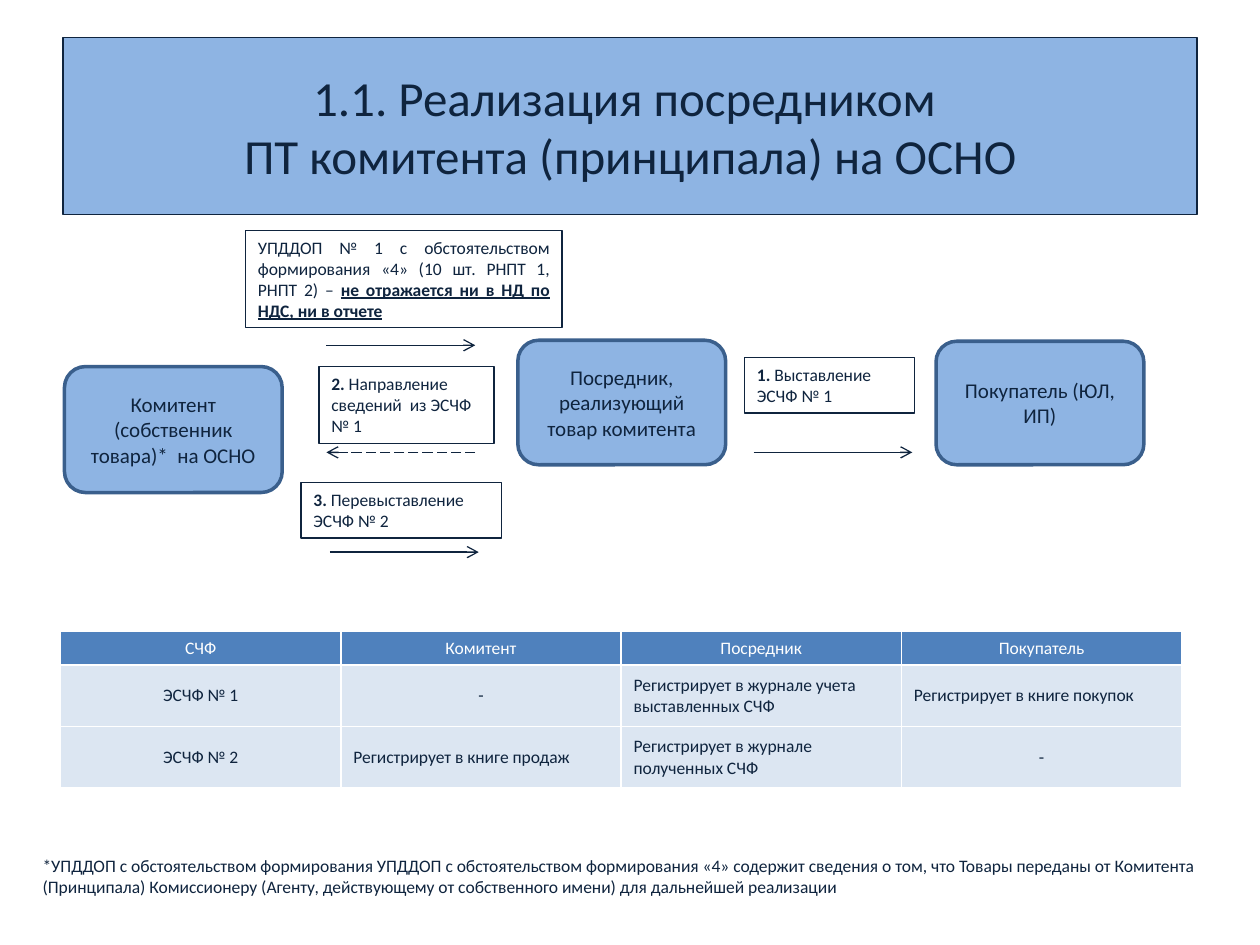
from lxml import etree
from pptx import Presentation
from pptx.dml.color import RGBColor
from pptx.enum.dml import MSO_LINE
from pptx.enum.shapes import MSO_CONNECTOR, MSO_SHAPE
from pptx.enum.text import MSO_ANCHOR, MSO_AUTO_SIZE, PP_ALIGN
from pptx.oxml.ns import qn
from pptx.util import Cm, Pt

RECT, ROUND = MSO_SHAPE.RECTANGLE, MSO_SHAPE.ROUNDED_RECTANGLE
LEFT, CENTER, JUSTIFY = PP_ALIGN.LEFT, PP_ALIGN.CENTER, PP_ALIGN.JUSTIFY
TOP, MIDDLE = MSO_ANCHOR.TOP, MSO_ANCHOR.MIDDLE
GROW = MSO_AUTO_SIZE.SHAPE_TO_FIT_TEXT
LONG_DASH = MSO_LINE.LONG_DASH


def rgb(value):
    return RGBColor.from_string(value)


class Board:
    font = "Calibri"
    ink, white = "0F243E", "FFFFFF"
    blue, outline = "8EB4E3", "3A5F8C"
    header, body = "4F81BD", "DCE6F2"

    def __init__(self, slide):
        self.s = slide

    def style(self, p, size, align=LEFT, color=ink):
        p.alignment = align
        p.font.name = self.font
        p.font.size = Pt(size)
        p.font.color.rgb = rgb(color)

    def block(self, kind, box, text, size=12, line=outline, width=2):
        """Add a filled shape with centred text."""
        sp = self.s.shapes.add_shape(kind, *map(Cm, box))
        sp.shadow.inherit = False
        sp.fill.solid()
        sp.fill.fore_color.rgb = rgb(self.blue)
        sp.line.color.rgb = rgb(line)
        sp.line.width = Pt(width)
        tf = sp.text_frame
        tf.word_wrap = True
        tf.vertical_anchor = MIDDLE
        p = tf.paragraphs[0]
        p.text = text
        self.style(p, size, CENTER)

    def note(self, box, parts, align=LEFT, framed=True):
        """Add a text box from (text, bold, underline) parts."""
        sp = self.s.shapes.add_textbox(*map(Cm, box))
        if framed:
            sp.line.color.rgb = rgb(self.ink)
            sp.line.width = Pt(0.75)
        tf = sp.text_frame
        tf.word_wrap = True
        tf.auto_size = GROW
        tf.vertical_anchor = TOP
        p = tf.paragraphs[0]
        self.style(p, 10, align)
        for text, bold, underline in parts:
            r = p.add_run()
            r.text = text
            r.font.bold = bold
            r.font.underline = underline

    def step(self, box, number, text):
        self.note(box, [(f"{number}. ", True, False), (text, False, False)])

    def arrow(self, x1, x2, y, dash=None):
        c = self.s.shapes.add_connector(MSO_CONNECTOR.STRAIGHT, Cm(x1), Cm(y), Cm(x2), Cm(y))
        c.line.color.rgb = rgb(self.ink)
        c.line.width = Pt(0.75)
        if dash:
            c.line.dash_style = dash
        etree.SubElement(c.line._get_or_add_ln(), qn("a:tailEnd"), type="arrow")
        etree.SubElement(c._element.spPr, qn("a:effectLst"))

    def table(self, box, heights, rows):
        frame = self.s.shapes.add_table(len(rows), len(rows[0]), *map(Cm, box))
        table = frame.table
        table.horz_banding = False
        for row, height in zip(table.rows, heights):
            row.height = Cm(height)
        for i, row in enumerate(rows):
            for j, text in enumerate(row):
                cell = table.cell(i, j)
                cell.fill.solid()
                cell.fill.fore_color.rgb = rgb(self.body if i else self.header)
                cell.vertical_anchor = MIDDLE
                p = cell.text_frame.paragraphs[0]
                p.text = text
                centred = i == 0 or j == 0 or text == "-"
                self.style(p, 10, CENTER if centred else LEFT, self.ink if i else self.white)
                p.font.bold = False


def main():
    prs = Presentation()
    prs.slide_width, prs.slide_height = Cm(25.4), Cm(19.05)
    board = Board(prs.slides.add_slide(prs.slide_layouts[6]))

    board.block(RECT, (1.27, 0.76, 22.86, 3.56),
                "1.1. Реализация посредником \nПТ комитента (принципала) на ОСНО",
                28, board.ink, 0.75)

    board.block(ROUND, (1.3, 7.39, 4.39, 2.54), "Комитент (собственник товара)*  на ОСНО")
    board.block(ROUND, (10.44, 6.86, 4.19, 2.51), "Посредник, реализующий товар комитента")
    board.block(ROUND, (18.87, 6.88, 4.19, 2.49), "Покупатель (ЮЛ, ИП)")

    board.step((15.01, 7.21, 3.43, 1.12), 1, "Выставление ЭСЧФ № 1")
    board.arrow(15.19, 18.39, 9.12)
    board.arrow(9.58, 6.58, 9.12, LONG_DASH)
    board.step((6.43, 7.39, 3.53, 1.55), 2, "Направление сведений  из ЭСЧФ № 1")
    board.arrow(6.65, 9.65, 11.13)
    board.step((6.07, 9.73, 4.04, 1.12), 3, "Перевыставление  ЭСЧФ № 2")

    board.table((1.22, 12.73, 22.6, 3.15), (0.62, 1.24, 1.24), [
        ["СЧФ", "Комитент", "Посредник", "Покупатель"],
        ["ЭСЧФ № 1", "-", "Регистрирует в журнале учета выставленных СЧФ",
         "Регистрирует в книге покупок"],
        ["ЭСЧФ № 2", "Регистрирует в книге продаж",
         "Регистрирует в журнале полученных СЧФ", "-"],
    ])

    footnote = ("*УПДДОП с обстоятельством формирования УПДДОП с обстоятельством "
                "формирования «4» содержит сведения о том, что Товары переданы от "
                "Комитента (Принципала) Комиссионеру (Агенту, действующему от "
                "собственного имени) для дальнейшей реализации")
    board.note((0.61, 17.12, 24.16, 1.55), [(footnote, False, False)], framed=False)

    board.note((4.95, 4.65, 6.38, 1.96), [
        ("УПДДОП № 1 с обстоятельством формирования «4» (10 шт. РНПТ 1, РНПТ 2) – ",
         False, False),
        ("не отражается ни в НД по НДС, ни в отчете", True, True),
    ], JUSTIFY)
    board.arrow(6.58, 9.58, 6.96)

    prs.save("out.pptx")


if __name__ == "__main__":
    main()
